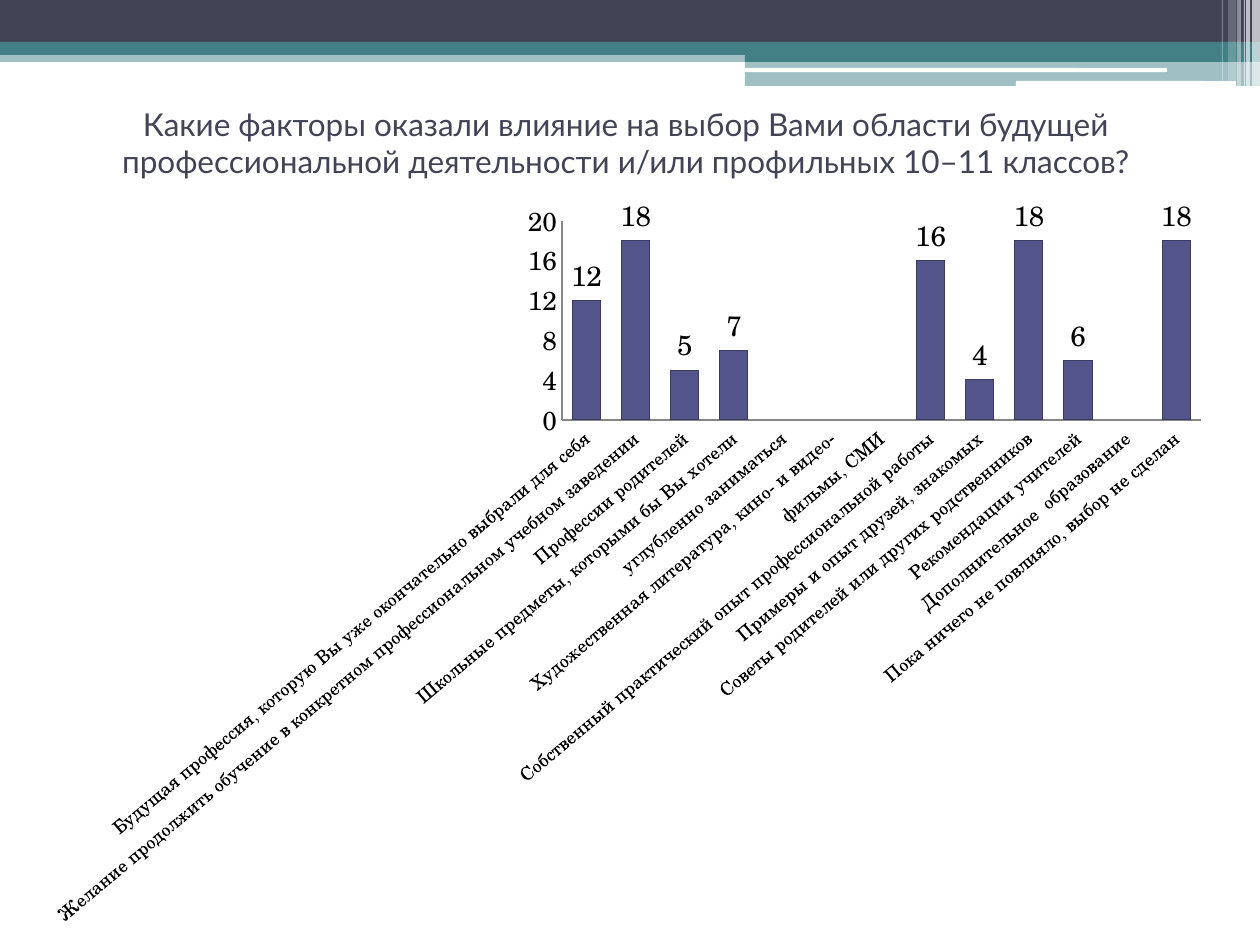
"""Build a survey slide: a titled column chart under a banded header."""
from lxml import etree
from pptx import Presentation
from pptx.chart.data import CategoryChartData
from pptx.dml.color import RGBColor
from pptx.enum import chart as charts, shapes, text
from pptx.oxml import parse_xml
from pptx.oxml.ns import qn
from pptx.util import Pt

PX = 914400 / 126
NAVY, TEAL, WHITE = "424456", "438086", "FFFFFF"

TITLE = ("Какие факторы оказали влияние на выбор Вами области будущей "
         "профессиональной деятельности и/или профильных 10–11 классов?")

FACTORS = [
    ("Будущая профессия, которую Вы уже окончательно выбрали для себя", 12),
    ("Желание продолжить обучение в конкретном профессиональном учебном заведении", 18),
    ("Профессии родителей", 5),
    ("Школьные предметы, которыми бы Вы хотели", 7),
    ("углубленно заниматься", None),
    ("Художественная литература, кино- и видео-", None),
    ("фильмы, СМИ", None),
    ("Собственный практический опыт профессиональной работы", 16),
    ("Примеры и опыт друзей, знакомых", 4),
    ("Советы родителей или других родственников", 18),
    ("Рекомендации учителей", 6),
    ("Дополнительное  образование", None),
    ("Пока ничего не повлияло, выбор не сделан", 18),
]

BANDS = [
    ((0, 50, 1260, 12), TEAL, 50),
    ((0, 0, 1260, 43), NAVY, 100),
    ((0, 42, 1260, 13), TEAL, 100),
    ((745, 49, 515, 13), TEAL, 100),
    ((745, 61, 515, 25), TEAL, 50),
]
HIGHLIGHTS = [(745, 68, 422, 4), (1016, 81, 220, 5)]
STRIPES = [(1252, 8, 86, 65), (1246, 4, 86, 65), (1244, 1, 86, 60),
           (1237, 4, 86, 40), (1228, 8, 81, 20), (1222, 1, 81, 30)]


def px(length):
    """Turn pixels into EMU."""
    return round(length * PX)


def color(value):
    """Turn a hex string into a colour."""
    return RGBColor.from_string(value)


def style_font(font, size, name, fill):
    """Set the size, typeface and colour of a font."""
    font.size = Pt(size)
    font.name = name
    font.color.rgb = color(fill)


def write(box, words, size=18, name="Lato", fill=NAVY, align=text.PP_ALIGN.CENTER):
    """Write one formatted paragraph into a box."""
    para = box.text_frame.paragraphs[0]
    para.alignment = align
    span = para.add_run()
    span.text = words
    style_font(span.font, size, name, fill)


class SlideBuilder:
    """Holds the chart style and the current slide."""

    chart_font = "TeX Gyre Schola"
    category_size, scale_size, value_size = 10.5, 15, 16
    ink, bar, bar_edge, axis = "000000", "53548A", "3A3B62", "868686"

    def __init__(self, page):
        """Keep the slide to draw on."""
        self.page = page

    def block(self, place, fill, opacity=100, rounded=False):
        """Add a borderless rectangle."""
        kind = shapes.MSO_SHAPE.ROUNDED_RECTANGLE if rounded else shapes.MSO_SHAPE.RECTANGLE
        box = self.page.shapes.add_shape(kind, *map(px, place))
        box.shadow.inherit = False
        box.line.fill.background()
        box.fill.solid()
        box.fill.fore_color.rgb = color(fill)
        if opacity < 100:
            tint = box._element.spPr.find(".//" + qn("a:srgbClr"))
            etree.SubElement(tint, qn("a:alpha"), val=str(opacity * 1000))

    def title(self, words, place):
        """Place and fill the title placeholder."""
        box = self.page.shapes.title
        box.left, box.top, box.width, box.height = map(px, place)
        box.text_frame.word_wrap = True
        box.text_frame.vertical_anchor = text.MSO_ANCHOR.MIDDLE
        write(box, words)

    def columns(self, rows, place, plot_place):
        """Add a column chart whose plot area sits at a given place on the slide."""
        data = CategoryChartData()
        data.categories = [name for name, _ in rows]
        data.add_series("Series 1", [value for _, value in rows])
        chart = self.page.shapes.add_chart(
            charts.XL_CHART_TYPE.COLUMN_CLUSTERED, *map(px, place), data).chart
        chart.has_legend = chart.has_title = False
        style_font(chart.font, self.value_size, self.chart_font, self.ink)
        self.format_bars(chart.plots[0])
        for axis, size in ((chart.category_axis, self.category_size),
                           (chart.value_axis, self.scale_size)):
            axis.has_major_gridlines = False
            axis.major_tick_mark = axis.minor_tick_mark = charts.XL_TICK_MARK.NONE
            axis.format.line.color.rgb = color(self.axis)
            style_font(axis.tick_labels.font, size, self.chart_font, self.ink)
        chart.category_axis._element.txPr.find(qn("a:bodyPr")).set("rot", "-2400000")
        scale = chart.value_axis
        scale.minimum_scale, scale.maximum_scale, scale.major_unit = 0, 20, 4
        self.place_plot(chart, place, plot_place)

    def format_bars(self, plot):
        """Colour the bars and show their values."""
        plot.gap_width = 75
        plot.vary_by_categories = False
        bars = plot.series[0]
        bars.format.fill.solid()
        bars.format.fill.fore_color.rgb = color(self.bar)
        bars.format.line.color.rgb = color(self.bar_edge)
        plot.has_data_labels = True
        labels = plot.data_labels
        labels.show_value = True
        labels.position = charts.XL_LABEL_POSITION.OUTSIDE_END
        style_font(labels.font, self.value_size, self.chart_font, self.ink)

    def place_plot(self, chart, place, plot_place):
        """Fix the inner plot area as shares of the chart frame."""
        left, top, width, height = place
        x, y, w, h = plot_place
        shares = {"x": (x - left) / width, "y": (y - top) / height,
                  "w": w / width, "h": h / height}
        modes = "".join(f'<c:{side}Mode val="edge"/>' for side in "xy")
        sizes = "".join(f'<c:{side} val="{share:.4f}"/>' for side, share in shares.items())
        layout = parse_xml(
            '<c:layout xmlns:c="http://schemas.openxmlformats.org/drawingml/2006/chart">'
            f'<c:manualLayout><c:layoutTarget val="inner"/>{modes}{sizes}'
            '</c:manualLayout></c:layout>')
        area = chart._chartSpace.chart.plotArea
        for old in area.findall(qn("c:layout")):
            area.remove(old)
        area.insert(0, layout)


def main():
    """Assemble the slide and save it."""
    deck = Presentation()
    deck.slide_width, deck.slide_height = px(1260), px(945)
    builder = SlideBuilder(deck.slides.add_slide(deck.slide_layouts[5]))
    for place, fill, opacity in BANDS:
        builder.block(place, fill, opacity)
    for place in HIGHLIGHTS:
        builder.block(place, WHITE, rounded=True)
    for left, width, height, opacity in STRIPES:
        builder.block((left, 0, width, height), WHITE, opacity)
    builder.title(TITLE, (59, 69, 1134, 147))
    builder.columns(FACTORS, (0, 195, 1225, 750), (562, 218, 639, 200))
    deck.save("out.pptx")


if __name__ == "__main__":
    main()
